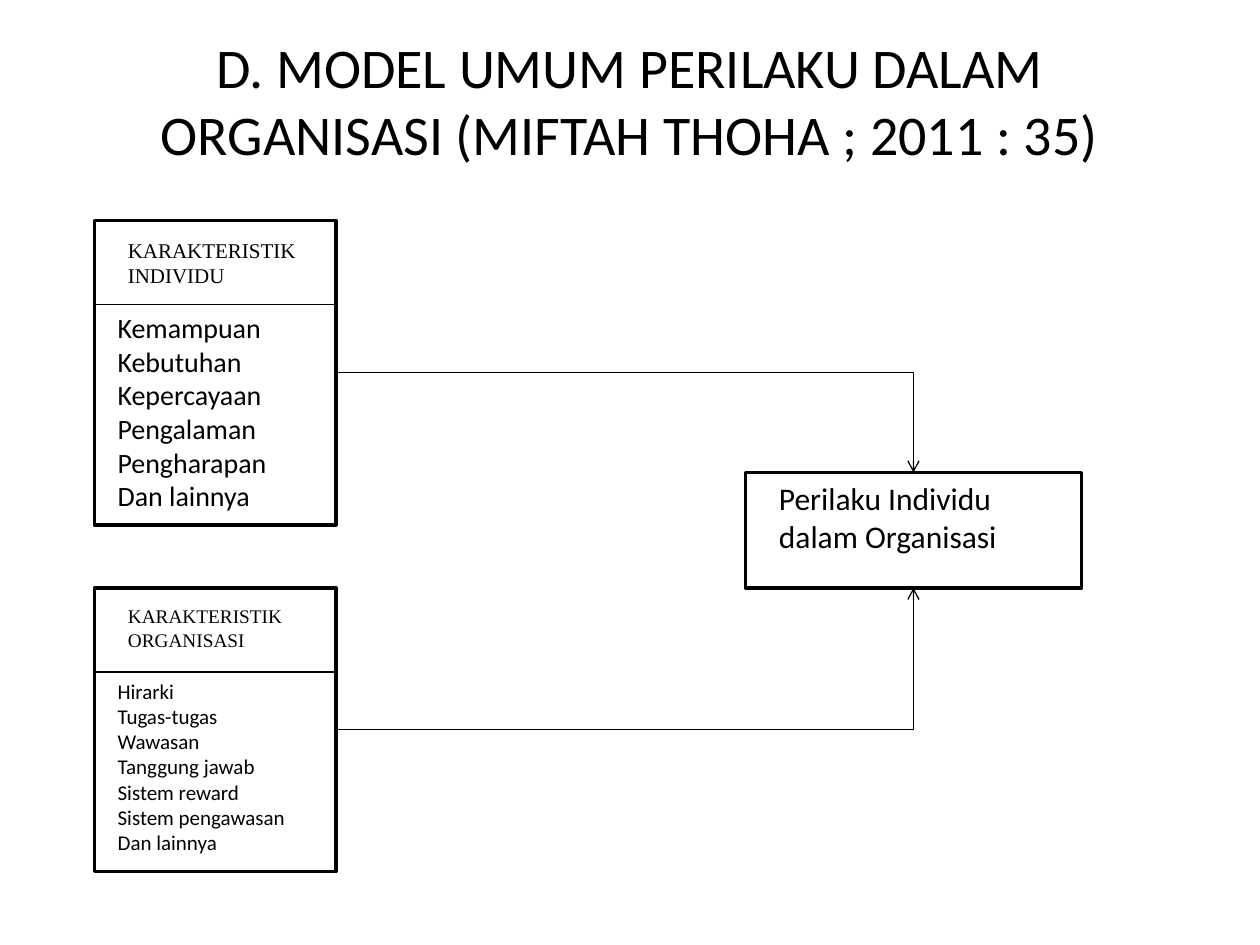
from dataclasses import dataclass

import pptx
import pptx.dml.color
import pptx.enum.shapes
import pptx.enum.text
import pptx.oxml
import pptx.oxml.ns
import pptx.util

PX = 914400 // 120  # one px is 1/120 inch
ALIGN = pptx.enum.text.PP_ALIGN
ANCHOR = pptx.enum.text.MSO_ANCHOR
CONNECTOR = pptx.enum.shapes.MSO_CONNECTOR


@dataclass(frozen=True)
class Theme:
    ink: str = "000000"
    paper: str = "FFFFFF"
    sans: str = "Calibri"
    serif: str = "Times New Roman"
    title: int = 32
    result: int = 18
    border: float = 2
    rule: float = 0.75


@dataclass(frozen=True)
class Box:
    x: int
    y: int
    w: int
    h: int

    def emu(self) -> list[int]:
        return [v * PX for v in (self.x, self.y, self.w, self.h)]


@dataclass(frozen=True)
class Card:
    box: Box
    heading: list[str]
    heading_size: int
    heading_h: int
    items: list[str]
    item_size: int
    items_w: int
    items_h: int


THEME = Theme()
HEAD_H = 80  # from the card's top to its divider
RESULT = Box(710, 450, 320, 110)
CARDS = [
    Card(Box(90, 210, 230, 290), ["KARAKTERISTIK", "INDIVIDU"], 12, 60,
         ["Kemampuan", "Kebutuhan", "Kepercayaan", "Pengalaman",
          "Pengharapan", "Dan lainnya"], 16, 210, 206),
    Card(Box(90, 560, 230, 270), ["KARAKTERISTIK", "ORGANISASI"], 11, 56,
         ["Hirarki", "Tugas-tugas", "Wawasan", "Tanggung jawab",
          "Sistem reward", "Sistem pengawasan", "Dan lainnya"], 12, 200, 181),
]


def rgb(value: str) -> pptx.dml.color.RGBColor:
    return pptx.dml.color.RGBColor.from_string(value)


def write(sp, lines: list[str], *, size: int, font: str = THEME.sans,
          align=ALIGN.LEFT, anchor=ANCHOR.TOP) -> None:
    """Fill a text frame with one plain paragraph per line."""
    tf = sp.text_frame
    tf.word_wrap = True
    tf.auto_size = pptx.enum.text.MSO_AUTO_SIZE.NONE
    tf.vertical_anchor = anchor
    for i, line in enumerate(lines):
        p = tf.paragraphs[0] if i == 0 else tf.add_paragraph()
        p.alignment = align
        p.space_before = pptx.util.Pt(0)
        pPr = p._p.get_or_add_pPr()
        pPr.set("marL", "0")
        pPr.set("indent", "0")
        pPr.append(pptx.oxml.parse_xml(
            f"<a:buNone {pptx.oxml.ns.nsdecls('a')}/>"))
        r = p.add_run()
        r.text = line
        r.font.size = pptx.util.Pt(size)
        r.font.name = font
        r.font.color.rgb = rgb(THEME.ink)


def place(sp, box: Box) -> None:
    """Move a placeholder to its box, in front of what is drawn so far."""
    sp.left, sp.top, sp.width, sp.height = box.emu()
    sp.element.getparent().append(sp.element)


def add_text(s, box: Box, lines: list[str], **fmt) -> None:
    write(s.shapes.add_textbox(*box.emu()), lines, **fmt)


def add_frame(s, box: Box) -> None:
    sp = s.shapes.add_shape(pptx.enum.shapes.MSO_SHAPE.RECTANGLE, *box.emu())
    sp.shadow.inherit = False
    sp.fill.solid()
    sp.fill.fore_color.rgb = rgb(THEME.paper)
    sp.line.color.rgb = rgb(THEME.ink)
    sp.line.width = pptx.util.Pt(THEME.border)


def add_line(s, x1: int, y1: int, x2: int, y2: int, *, arrow: bool = False) -> None:
    """Draw a straight rule, or a one-bend arrow."""
    kind = CONNECTOR.ELBOW if arrow else CONNECTOR.STRAIGHT
    c = s.shapes.add_connector(kind, *(v * PX for v in (x1, y1, x2, y2)))
    c.line.color.rgb = rgb(THEME.ink)
    c.line.width = pptx.util.Pt(THEME.rule)
    spPr = c.element.spPr
    ns = pptx.oxml.ns.nsdecls("a")
    if arrow:
        spPr.find(pptx.oxml.ns.qn("a:prstGeom")).set("prst", "bentConnector2")
        c.line._get_or_add_ln().append(
            pptx.oxml.parse_xml(f'<a:tailEnd {ns} type="arrow"/>'))
    spPr.append(pptx.oxml.parse_xml(f"<a:effectLst {ns}/>"))


def add_card(s, card: Card, body) -> None:
    """Draw a framed card: heading, divider and list."""
    b = card.box
    divider = b.y + HEAD_H
    add_frame(s, b)
    add_line(s, b.x, divider, b.x + b.w, divider)
    add_text(s, Box(b.x + 20, b.y + 10, 190, card.heading_h), card.heading,
             size=card.heading_size, font=THEME.serif)
    place(body, Box(b.x + 10, divider, card.items_w, card.items_h))
    write(body, card.items, size=card.item_size)


def main() -> None:
    prs = pptx.Presentation()
    prs.slide_width, prs.slide_height = 1200 * PX, 900 * PX
    s = prs.slides.add_slide(prs.slide_layouts.get_by_name("Two Content"))
    title, *bodies = list(s.placeholders)

    # Title
    place(title, Box(90, 0, 1020, 190))
    write(title, ["D. MODEL UMUM PERILAKU DALAM ORGANISASI (MIFTAH THOHA ; 2011 : 35)"],
          size=THEME.title, align=ALIGN.CENTER, anchor=ANCHOR.MIDDLE)

    # Characteristics
    for card, body in zip(CARDS, bodies):
        add_card(s, card, body)

    # Resulting behaviour
    add_frame(s, RESULT)
    add_text(s, Box(RESULT.x + 20, RESULT.y, 280, 85),
             ["Perilaku Individu dalam Organisasi"], size=THEME.result)

    # Arrows from each card to the nearest edge of the result
    for card, edge in zip(CARDS, (RESULT.y, RESULT.y + RESULT.h)):
        b = card.box
        add_line(s, b.x + b.w, b.y + b.h // 2,
                 RESULT.x + RESULT.w // 2, edge, arrow=True)

    prs.save("out.pptx")


if __name__ == "__main__":
    main()
